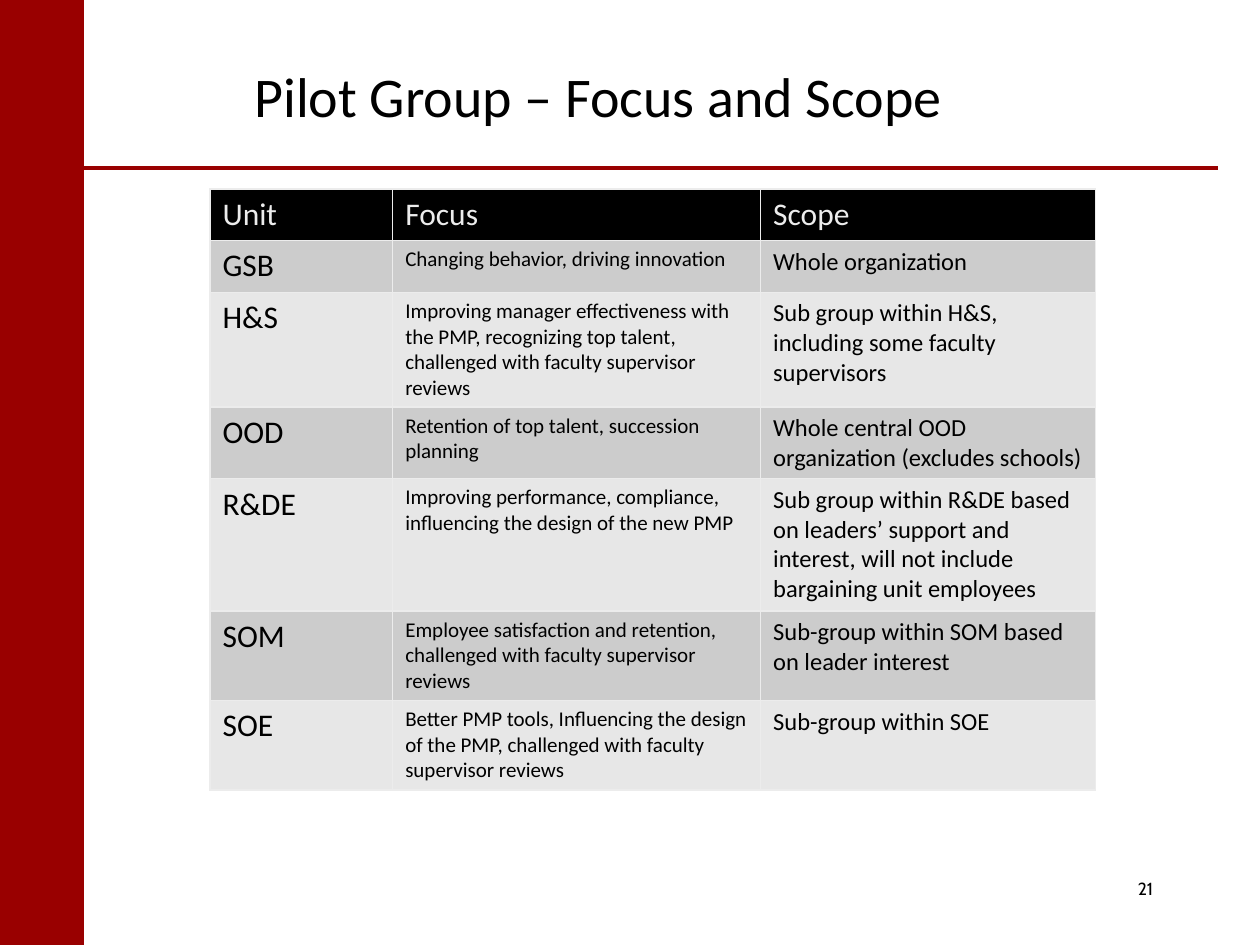
from pptx import Presentation, util as u
from pptx.dml.color import RGBColor
from pptx.enum import shapes, text
from pptx.oxml import parse_xml
from pptx.oxml.ns import nsdecls, qn

RED, BLACK, PALE = "990000", "000000", "ECECEC"
BANDS = ["CCCCCC", "E7E7E7"]


def paint(fill, color):
    fill.solid()
    fill.fore_color.rgb = RGBColor.from_string(color)


def write(tf, words, size, color=BLACK, name="Calibri", align=text.PP_ALIGN.LEFT):
    p = tf.paragraphs[0]
    p.alignment = align
    r = p.add_run()
    r.text = words
    for key, value in {"size": u.Pt(size), "name": name, "bold": False}.items():
        setattr(r.font, key, value)
    paint(r.font.fill, color)


prs = Presentation()
prs.slide_width, prs.slide_height = u.Inches(10), u.Inches(7.5)
W, H = prs.slide_width, prs.slide_height
s = prs.slides.add_slide(prs.slide_layouts[5])
bar_w = W // 15

# Side bar and rule under the title
bar = s.shapes.add_shape(shapes.MSO_SHAPE.RECTANGLE, 0, 0, bar_w, H)
bar.shadow.inherit = False
paint(bar.fill, RED)
bar.line.fill.background()

rule_y = u.Inches(1.33)
rule = s.shapes.add_connector(shapes.MSO_CONNECTOR.STRAIGHT, bar_w, rule_y, W - W // 30, rule_y)
paint(rule.line.fill, RED)
rule.line.width = u.Pt(2.25)
rule._element.spPr.append(parse_xml(f"<a:effectLst {nsdecls('a')}/>"))

# Title and page number
title = s.shapes.title
title.left, title.top, title.width, title.height = [u.Inches(v) for v in (0.75, 0.17, 8, 1.17)]
title.text_frame.vertical_anchor = text.MSO_ANCHOR.MIDDLE
write(title.text_frame, "Pilot Group – Focus and Scope", 32, align=text.PP_ALIGN.CENTER)

number = s.shapes.add_textbox(*[u.Inches(v) for v in (7.92, 6.92, 1.33, 0.42)])
number.text_frame.word_wrap = True
write(number.text_frame, "21", 10, name="Cabin", align=text.PP_ALIGN.RIGHT)

# Table of pilot units
rows = [
    ("Unit", "Focus", "Scope"),
    ("GSB", "Changing behavior, driving innovation", "Whole organization"),
    ("H&S", "Improving manager effectiveness with the PMP, recognizing top talent, "
            "challenged with faculty supervisor reviews",
     "Sub group within H&S, including some faculty supervisors"),
    ("OOD", "Retention of top talent, succession planning",
     "Whole central OOD organization (excludes schools)"),
    ("R&DE", "Improving performance, compliance, influencing the design of the new PMP",
     "Sub group within R&DE based on leaders’ support and interest, "
     "will not include bargaining unit employees"),
    ("SOM", "Employee satisfaction and retention, challenged with faculty supervisor reviews",
     "Sub-group within SOM based on leader interest"),
    ("SOE", "Better PMP tools, Influencing the design of the PMP, "
            "challenged with faculty supervisor reviews",
     "Sub-group within SOE"),
]
col_widths = [1.45, 2.92, 2.66]
row_heights = [0.41, 0.41, 0.91, 0.57, 1.05, 0.71, 0.71]
body_sizes = [18, 12, 14]

frame = s.shapes.add_table(len(rows), len(col_widths), W // 6, H // 5,
                           u.Inches(sum(col_widths)), u.Inches(sum(row_heights)))
table = frame.table
for col, width in zip(table.columns, col_widths):
    col.width = u.Inches(width)
for row, height in zip(table.rows, row_heights):
    row.height = u.Inches(height)

for i, row in enumerate(rows):
    for j, words in enumerate(row):
        cell = table.cell(i, j)
        write(cell.text_frame, words, body_sizes[j] if i else 18, BLACK if i else PALE)
        tcPr = cell._tc.get_or_add_tcPr()
        for side in ("lnL", "lnR", "lnT", "lnB"):
            tcPr.append(parse_xml(
                f'<a:{side} {nsdecls("a")} w="{u.Pt(1)}"><a:solidFill>'
                f'<a:srgbClr val="{PALE}"/></a:solidFill></a:{side}>'))
        paint(cell.fill, BANDS[(i - 1) % 2] if i else BLACK)

prs.save("out.pptx")
